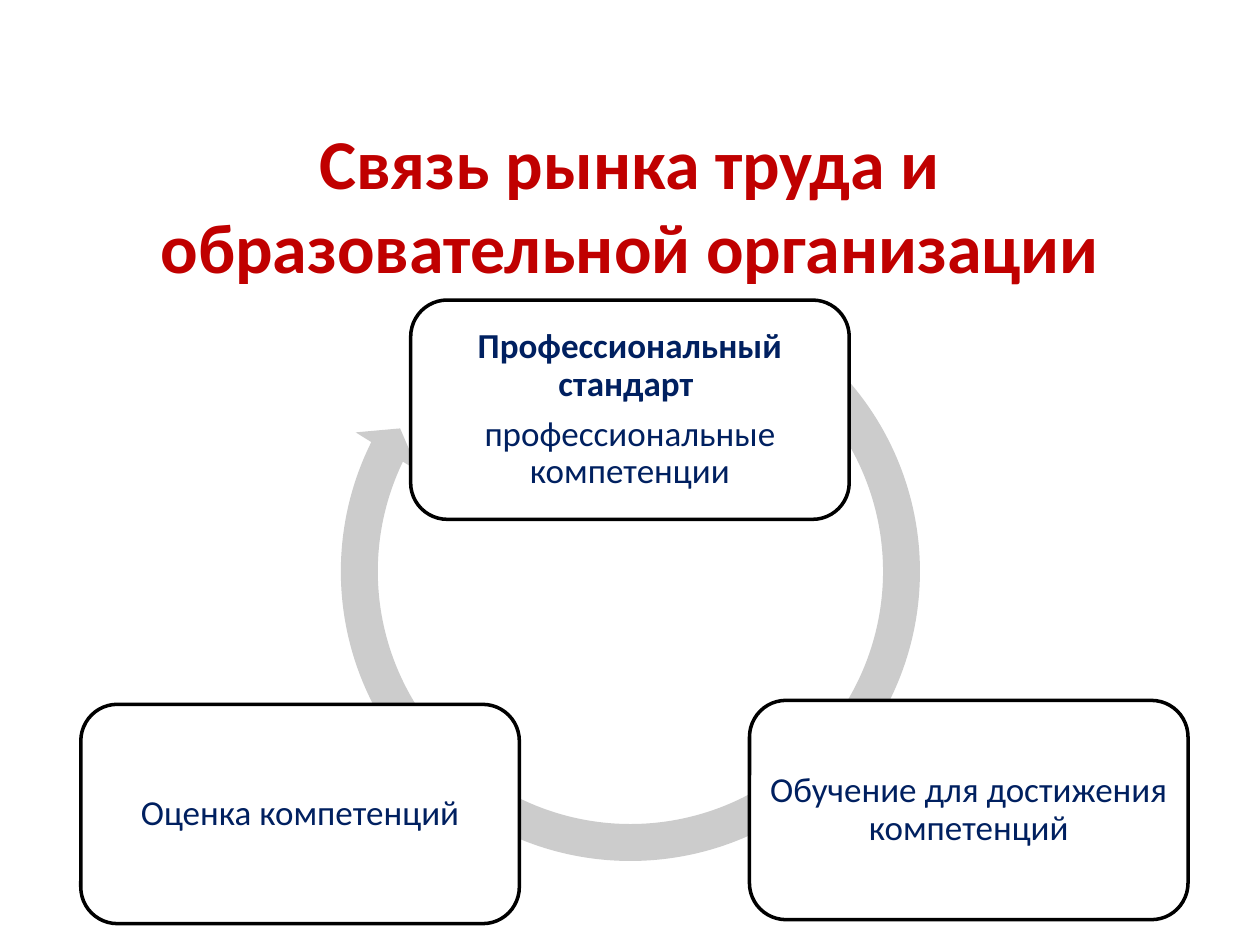
from dataclasses import dataclass

from pptx import Presentation
from pptx.dml.color import RGBColor
from pptx.enum.shapes import MSO_SHAPE
from pptx.enum.text import MSO_ANCHOR, MSO_AUTO_SIZE, PP_ALIGN
from pptx.util import Cm, Pt


@dataclass(frozen=True)
class Theme:
    font: str = "Calibri"
    title_color: RGBColor = RGBColor(0xC0, 0x00, 0x00)
    text_color: RGBColor = RGBColor(0x00, 0x20, 0x60)
    box_fill: RGBColor = RGBColor(0xFF, 0xFF, 0xFF)
    box_line: RGBColor = RGBColor(0x00, 0x00, 0x00)
    arrow_fill: RGBColor = RGBColor(0xCC, 0xCC, 0xCC)
    title_size: Pt = Pt(40)
    text_size: Pt = Pt(20)
    paragraph_gap: Pt = Pt(7)
    line_width: Pt = Pt(2)


class CycleSlide:
    """Holds the theme and the slide, and draws each kind of element."""

    BOX_WIDTH, BOX_HEIGHT = Cm(8.84), Cm(4.42)

    def __init__(self, slide, theme):
        self.slide = slide
        self.theme = theme

    def add_run(self, paragraph, text, size, color, bold):
        run = paragraph.add_run()
        run.text = text
        run.font.name = self.theme.font
        run.font.size = size
        run.font.bold = bold
        run.font.color.rgb = color

    def add_title(self, text):
        title = self.slide.shapes.title
        title.left, title.top = Cm(1.27), Cm(2.51)
        title.width, title.height = Cm(22.86), Cm(3.18)
        frame = title.text_frame
        frame.auto_size = MSO_AUTO_SIZE.NONE
        frame.vertical_anchor = MSO_ANCHOR.MIDDLE
        paragraph = frame.paragraphs[0]
        paragraph.alignment = PP_ALIGN.CENTER
        self.add_run(paragraph, text, self.theme.title_size, self.theme.title_color, True)

    def add_shape(self, kind, left, top, width, height, fill):
        shape = self.slide.shapes.add_shape(kind, left, top, width, height)
        shape.shadow.inherit = False
        shape.fill.solid()
        shape.fill.fore_color.rgb = fill
        return shape

    def add_cycle_arrow(self, left, top, size, adjustments):
        arrow = self.add_shape(MSO_SHAPE.CIRCULAR_ARROW, left, top, size, size,
                               self.theme.arrow_fill)
        arrow.line.fill.background()
        for index, value in enumerate(adjustments):
            arrow.adjustments[index] = value

    def add_box(self, left, top, lines):
        """Draw a rounded box; lines are (text, bold) pairs."""
        theme = self.theme
        box = self.add_shape(MSO_SHAPE.ROUNDED_RECTANGLE, left, top,
                             self.BOX_WIDTH, self.BOX_HEIGHT, theme.box_fill)
        box.line.color.rgb = theme.box_line
        box.line.width = theme.line_width
        frame = box.text_frame
        frame.word_wrap = True
        frame.vertical_anchor = MSO_ANCHOR.MIDDLE
        frame.margin_left = frame.margin_right = Cm(0.2)
        frame.margin_top = frame.margin_bottom = Cm(0.2)
        for index, (text, bold) in enumerate(lines):
            paragraph = frame.add_paragraph() if index else frame.paragraphs[0]
            paragraph.alignment = PP_ALIGN.CENTER
            paragraph.line_spacing = 0.9
            if index < len(lines) - 1:
                paragraph.space_after = theme.paragraph_gap
            self.add_run(paragraph, text, theme.text_size, theme.text_color, bold)


def main():
    presentation = Presentation()
    presentation.slide_width, presentation.slide_height = Cm(25.4), Cm(19.05)
    slide = presentation.slides.add_slide(presentation.slide_layouts[5])
    cycle = CycleSlide(slide, Theme())

    # Title
    cycle.add_title("Связь рынка труда и образовательной организации")

    # Ring behind the boxes: thickness, head angle, end, start, head width
    cycle.add_cycle_arrow(Cm(6.5), Cm(5.31), Cm(12.42),
                          (0.06, 3.4, 123.7, 183.07, 0.06))

    # Stages of the cycle, clockwise from the top
    cycle.add_box(Cm(8.28), Cm(6.05), [("Профессиональный стандарт ", True),
                                       ("профессиональные компетенции", False)])
    cycle.add_box(Cm(15.11), Cm(14.12), [("Обучение для достижения компетенций", False)])
    cycle.add_box(Cm(1.63), Cm(14.2), [("Оценка компетенций", False)])

    presentation.save("out.pptx")


if __name__ == "__main__":
    main()
